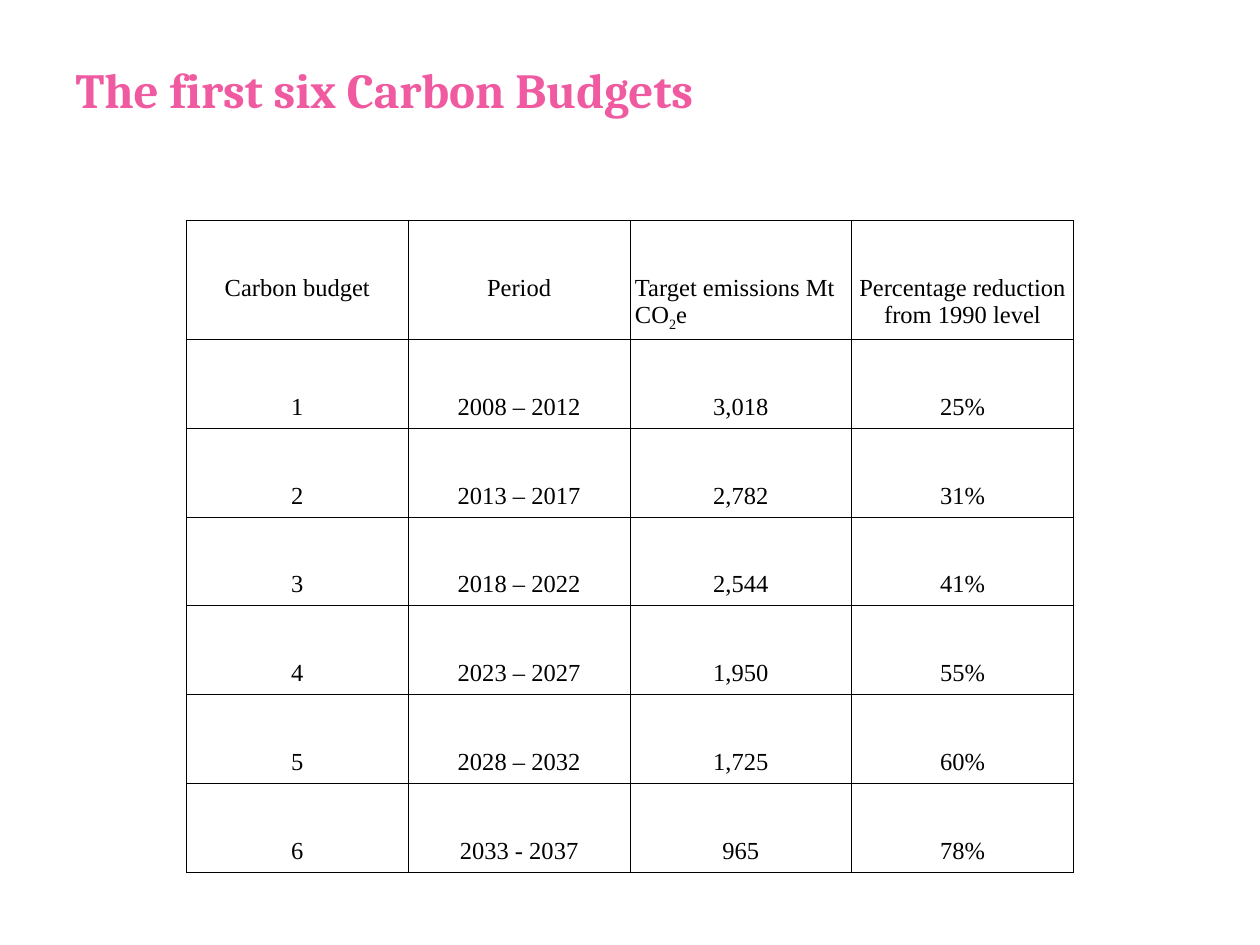
from lxml import etree
from pptx import Presentation
from pptx import util as u
from pptx.dml.color import RGBColor
from pptx.enum import text
from pptx.oxml import ns

PINK = RGBColor(0xF0, 0x5A, 0xA0)
BLACK = RGBColor(0x00, 0x00, 0x00)

# Each header is a list of (text, is_subscript) runs
HEADERS = [
    [("Carbon budget", False)],
    [("Period", False)],
    [("Target emissions Mt CO", False), ("2", True), ("e", False)],
    [("Percentage reduction from 1990 level", False)],
]
BUDGETS = [
    ("1", "2008 – 2012", "3,018", "25%"),
    ("2", "2013 – 2017", "2,782", "31%"),
    ("3", "2018 – 2022", "2,544", "41%"),
    ("4", "2023 – 2027", "1,950", "55%"),
    ("5", "2028 – 2032", "1,725", "60%"),
    ("6", "2033 - 2037", "965", "78%"),
]


class Deck:
    title_font, title_size = "Cambria", u.Pt(28)
    body_font, body_size = "Times New Roman", u.Pt(14)
    border = u.Pt(0.38)

    def __init__(self, prs):
        self.s = prs.slides.add_slide(prs.slide_layouts[5])

    def run(self, p, content, font, size, color, bold=False, subscript=False):
        r = p.add_run()
        r.text = content
        r.font.name, r.font.size, r.font.bold = font, size, bold
        r.font.color.rgb = color
        if subscript:
            r.font._element.set("baseline", "-25000")

    def title(self, content, left, top, width, height):
        sp = self.s.shapes.title
        sp.left, sp.top, sp.width, sp.height = left, top, width, height
        tf = sp.text_frame
        tf.word_wrap = True
        tf.auto_size = text.MSO_AUTO_SIZE.NONE
        tf.vertical_anchor = text.MSO_ANCHOR.TOP
        p = tf.paragraphs[0]
        p.alignment = text.PP_ALIGN.LEFT
        self.run(p, content, self.title_font, self.title_size, PINK, bold=True)

    def cell(self, cell, runs, align):
        cell.margin_left = cell.margin_right = u.Cm(0.1)
        cell.margin_top, cell.margin_bottom = u.Cm(1.09), 0
        cell.vertical_anchor = text.MSO_ANCHOR.TOP
        p = cell.text_frame.paragraphs[0]
        p.alignment = align
        for content, subscript in runs:
            self.run(p, content, self.body_font, self.body_size, BLACK,
                     subscript=subscript)
        # Borders come before the fill in the cell properties
        tc_pr = cell._tc.get_or_add_tcPr()
        for side in ("a:lnL", "a:lnR", "a:lnT", "a:lnB"):
            ln = etree.SubElement(tc_pr, ns.qn(side), w=str(self.border))
            fill = etree.SubElement(ln, ns.qn("a:solidFill"))
            etree.SubElement(fill, ns.qn("a:srgbClr"), val=str(BLACK))
        cell.fill.background()

    def table(self, rows, left, top, col_width, header_height, row_height):
        n_cols = len(rows[0])
        height = header_height + row_height * (len(rows) - 1)
        table = self.s.shapes.add_table(
            len(rows), n_cols, left, top, col_width * n_cols, height).table
        table.first_row = table.horz_banding = False
        for col in table.columns:
            col.width = col_width
        for i, runs_by_col in enumerate(rows):
            table.rows[i].height = row_height if i else header_height
            for j, runs in enumerate(runs_by_col):
                # The header with a subscript is the only left-aligned cell
                align = (text.PP_ALIGN.LEFT if len(runs) > 1
                         else text.PP_ALIGN.CENTER)
                self.cell(table.cell(i, j), runs, align)


def main():
    prs = Presentation()
    prs.slide_width, prs.slide_height = u.Cm(25.4), u.Cm(19.05)
    deck = Deck(prs)

    # Title
    deck.title("The first six Carbon Budgets",
               u.Cm(1.27), u.Cm(1.07), u.Cm(20.96), u.Cm(2.1))

    # Carbon budget table
    rows = [HEADERS] + [[[(v, False)] for v in row] for row in BUDGETS]
    deck.table(rows, u.Cm(3.76), u.Cm(4.44), u.Cm(4.47),
               u.Cm(2.4), u.Cm(1.79))

    prs.save("out.pptx")


if __name__ == "__main__":
    main()
